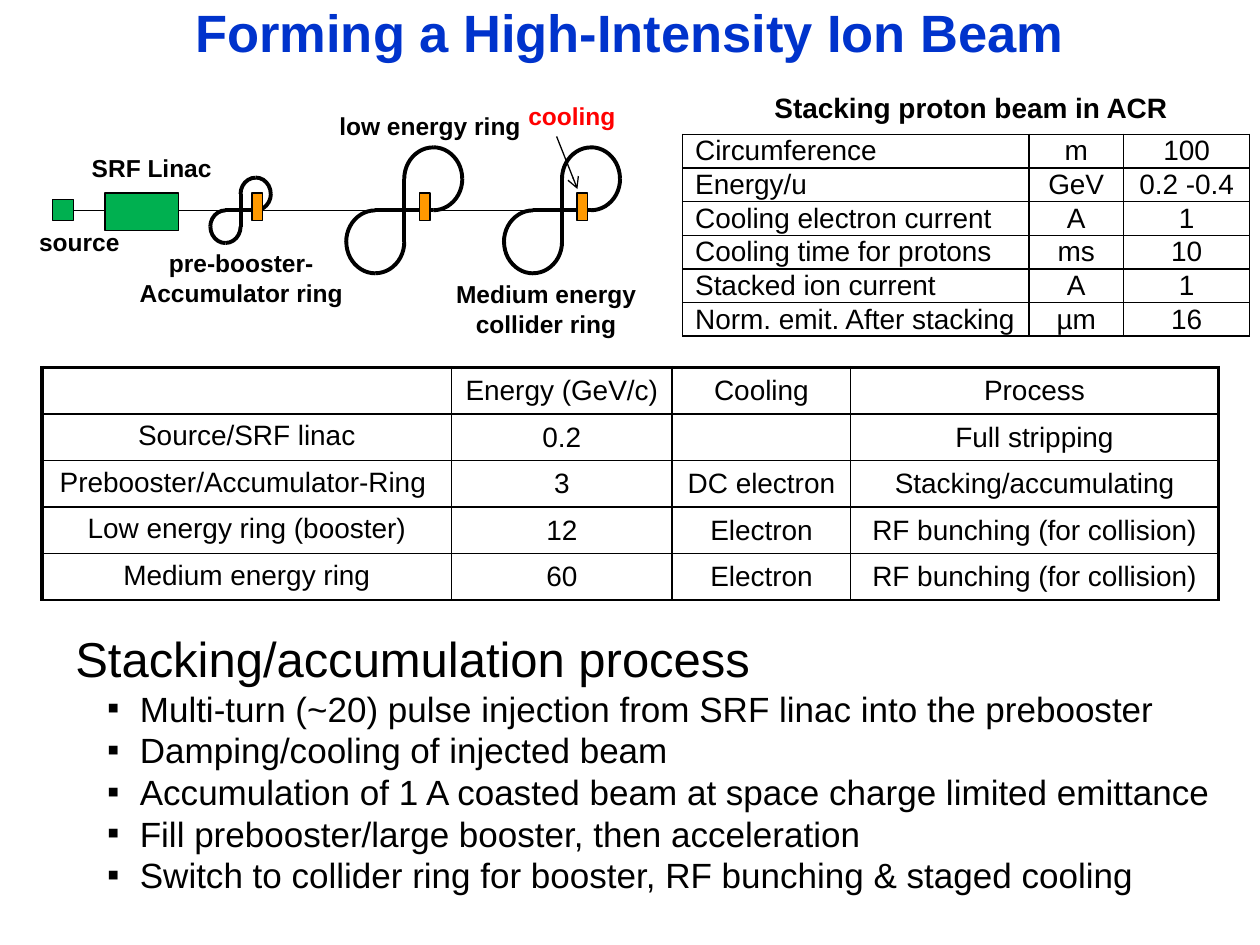
from lxml import etree
from pptx import Presentation
from pptx import util as u
from pptx.dml.color import RGBColor
from pptx.enum import shapes, text
from pptx.oxml import ns

COLORS = {"title": "0033CC", "ink": "000000", "machine": "00B050",
          "cooler": "FF9900", "cooling": "FF0000"}
LEFT, CENTER = text.PP_ALIGN.LEFT, text.PP_ALIGN.CENTER
TOP, MIDDLE = text.MSO_ANCHOR.TOP, text.MSO_ANCHOR.MIDDLE

ACR_ROWS = [
    ("Circumference", "m", "100"),
    ("Energy/u", "GeV", "0.2 -0.4"),
    ("Cooling electron current", "A", "1"),
    ("Cooling time for protons", "ms", "10"),
    ("Stacked ion current", "A", "1"),
    ("Norm. emit. After stacking", "µm", "16"),
]
STAGE_ROWS = [
    ("", "Energy (GeV/c) ", "Cooling", "Process"),
    ("Source/SRF linac", "0.2", "", "Full stripping"),
    ("Prebooster/Accumulator-Ring ", "3", "DC electron", "Stacking/accumulating"),
    ("Low energy ring (booster)", "12", "Electron", "RF bunching (for collision)"),
    ("Medium energy ring", "60", "Electron", "RF bunching (for collision)"),
]
STEPS = [
    "Multi-turn (~20) pulse injection from SRF linac into the prebooster",
    "Damping/cooling of injected beam",
    "Accumulation of 1 A coasted beam at space charge limited emittance",
    "Fill prebooster/large booster, then acceleration",
    "Switch to collider ring for booster, RF bunching & staged cooling",
]
LABELS = [
    ("source", 0.43, 4.45, 2.34, 0.86, "ink"),
    ("SRF Linac", 1.47, 2.97, 3.18, 0.86, "ink"),
    ("pre-booster-Accumulator ring", 2.54, 4.88, 4.65, 1.45, "ink"),
    ("low energy ring", 6.55, 2.11, 4.24, 0.86, "ink"),
    ("Medium energy collider ring", 8.89, 5.51, 4.24, 1.47, "ink"),
    ("cooling", 10.36, 1.91, 2.34, 0.86, "cooling"),
]
RINGS = [(4.85, 0.61, 0.66), (8.15, 1.17, 1.27), (11.33, 1.17, 1.27)]
COOLERS = [5.08, 8.46, 11.63]
BEAM_Y = 4.24


def rgb(name):
    """Return the named colour."""
    return RGBColor.from_string(COLORS[name])


def cm(*lengths):
    """Convert centimetres to slide units."""
    return [u.Cm(length) for length in lengths]


def add_run(paragraph, words, size, color="ink", bold=False):
    """Append one formatted run."""
    run = paragraph.add_run()
    run.text = words
    run.font.name = "Arial"
    run.font.size = u.Pt(size)
    run.font.bold = bold
    run.font.color.rgb = rgb(color)


def add_box(parent, left, top, width, height, anchor=TOP):
    """Add a wrapping text box and return its text frame."""
    frame = parent.add_textbox(*cm(left, top, width, height)).text_frame
    frame.word_wrap = True
    frame.vertical_anchor = anchor
    return frame


def add_label(parent, words, box, size=14, color="ink", anchor=TOP):
    """Add a bold centred label."""
    paragraph = add_box(parent, *box, anchor).paragraphs[0]
    paragraph.alignment = CENTER
    add_run(paragraph, words, size, color, True)


def add_block(parent, left, top, width, height, color):
    """Add a filled rectangle with a thin outline."""
    block = parent.add_shape(shapes.MSO_SHAPE.RECTANGLE, *cm(left, top, width, height))
    block.shadow.inherit = False
    block.fill.solid()
    block.fill.fore_color.rgb = rgb(color)
    block.line.color.rgb = rgb("ink")
    block.line.width = u.Pt(0.75)


def add_line(parent, x1, y1, x2, y2, width=0.75, arrow=False):
    """Add a straight line, with an arrowhead at its end if asked."""
    line = parent.add_connector(shapes.MSO_CONNECTOR.STRAIGHT, *cm(x1, y1, x2, y2))
    line.line.color.rgb = rgb("ink")
    line.line.width = u.Pt(width)
    if arrow:
        etree.SubElement(line.line._get_or_add_ln(), ns.qn("a:tailEnd"), type="arrow")
    etree.SubElement(line._element.spPr, ns.qn("a:effectLst"))


def add_arc(parent, x, y, width, height, rotation):
    """Add a quarter arc centred on a point and turned in right angles."""
    if rotation % 180:
        width, height = height, width
    arc = parent.add_shape(shapes.MSO_SHAPE.ARC,
                           *cm(x - width / 2, y - height / 2, width, height))
    arc.rotation = rotation
    arc.shadow.inherit = False
    arc.fill.background()
    arc.line.color.rgb = rgb("ink")
    arc.line.width = u.Pt(2.25)


def add_ring(parent, x, width, height):
    """Add a figure-eight ring crossing the beam line at x."""
    add_line(parent, x, BEAM_Y - height / 2, x, BEAM_Y + height / 2, 2.25)
    add_line(parent, x - width / 2, BEAM_Y, x + width / 2, BEAM_Y, 2.25)
    for side, rotations in ((1, (0, 270, 90)), (-1, (180, 90, 270))):
        for rotation in rotations:
            add_arc(parent, x + side * width / 2, BEAM_Y - side * height / 2,
                    width, height, rotation)


def add_accelerator(slide):
    """Draw the accelerator chain as one group."""
    parent = slide.shapes.add_group_shape().shapes
    add_line(parent, 1.32, BEAM_Y, 11.63, BEAM_Y)
    add_block(parent, 1.06, 4.02, 0.42, 0.42, "machine")
    add_block(parent, 2.12, 3.89, 1.48, 0.76, "machine")
    for ring in RINGS:
        add_ring(parent, *ring)
    for left in COOLERS:
        add_block(parent, left, 3.89, 0.21, 0.55, "cooler")
    for words, *box, color in LABELS:
        add_label(parent, words, box, color=color)
    add_line(parent, 11.22, 2.75, 11.64, 3.81, arrow=True)


def style_cell(cell, borders):
    """Give a cell its borders and no fill."""
    properties = cell._tc.get_or_add_tcPr()
    for side, width in zip("LRTB", borders):
        line = etree.SubElement(properties, ns.qn(f"a:ln{side}"), w=str(u.Pt(width)))
        fill = etree.SubElement(line, ns.qn("a:solidFill"))
        etree.SubElement(fill, ns.qn("a:srgbClr"), val=COLORS["ink"])
    cell.fill.background()


def add_grid(slide, rows, left, top, widths, height, margin, first_align, first_anchor, frame):
    """Add a ruled table whose left, right and top edges have the frame width."""
    table = slide.shapes.add_table(len(rows), len(widths), *cm(
        left, top, sum(widths), height * len(rows))).table
    table.first_row = table.horz_banding = False
    for column, width in zip(table.columns, widths):
        column.width = u.Cm(width)
    last = len(widths) - 1
    for i, values in enumerate(rows):
        table.rows[i].height = u.Cm(height)
        for j, value in enumerate(values):
            cell = table.cell(i, j)
            cell.margin_top = cell.margin_bottom = u.Cm(margin)
            cell.vertical_anchor = MIDDLE if j else first_anchor
            paragraph = cell.text_frame.paragraphs[0]
            paragraph.alignment = CENTER if j else first_align
            if value:
                add_run(paragraph, value, 16)
            else:
                etree.SubElement(paragraph._p, ns.qn("a:endParaRPr"), sz="1600")
            style_cell(cell, (1 if j else frame, frame if j == last else 1,
                              1 if i else frame, 1))


def add_process(slide):
    """Add the heading and the bulleted steps."""
    frame = add_box(slide.shapes, 1.27, 12.78, 23.7, 6.2)
    heading = frame.paragraphs[0]
    heading.line_spacing = 0.8
    add_run(heading, "Stacking/accumulation process", 28)
    for step in STEPS:
        paragraph = frame.add_paragraph()
        paragraph.line_spacing = 0.8
        paragraph.space_before = u.Pt(4.6)
        properties = paragraph._p.get_or_add_pPr()
        properties.set("marL", str(u.Cm(1.3)))
        properties.set("indent", str(u.Cm(-0.66)))
        etree.SubElement(properties, ns.qn("a:buFont"), typeface="Arial")
        etree.SubElement(properties, ns.qn("a:buChar"), char="▪")
        add_run(paragraph, step, 20)


def main():
    """Build and save the slide."""
    presentation = Presentation()
    presentation.slide_width, presentation.slide_height = cm(25.4, 19.05)
    slide = presentation.slides.add_slide(presentation.slide_layouts[6])
    add_label(slide.shapes, "Forming a High-Intensity Ion Beam",
              (0, 0, 25.4, 1.27), 30, "title", MIDDLE)
    add_process(slide)
    add_grid(slide, ACR_ROWS, 13.76, 2.71, (6.98, 1.91, 2.54), 0.63, 0, LEFT, MIDDLE, 1)
    add_label(slide.shapes, "Stacking proton beam in ACR",
              (14.39, 1.7, 10.37, 0.94), 16, anchor=MIDDLE)
    add_grid(slide, STAGE_ROWS, 0.85, 7.41, (8.25, 4.45, 3.6, 7.41), 0.93, 0.13, CENTER, TOP, 2.25)
    add_accelerator(slide)
    presentation.save("out.pptx")


if __name__ == "__main__":
    main()
